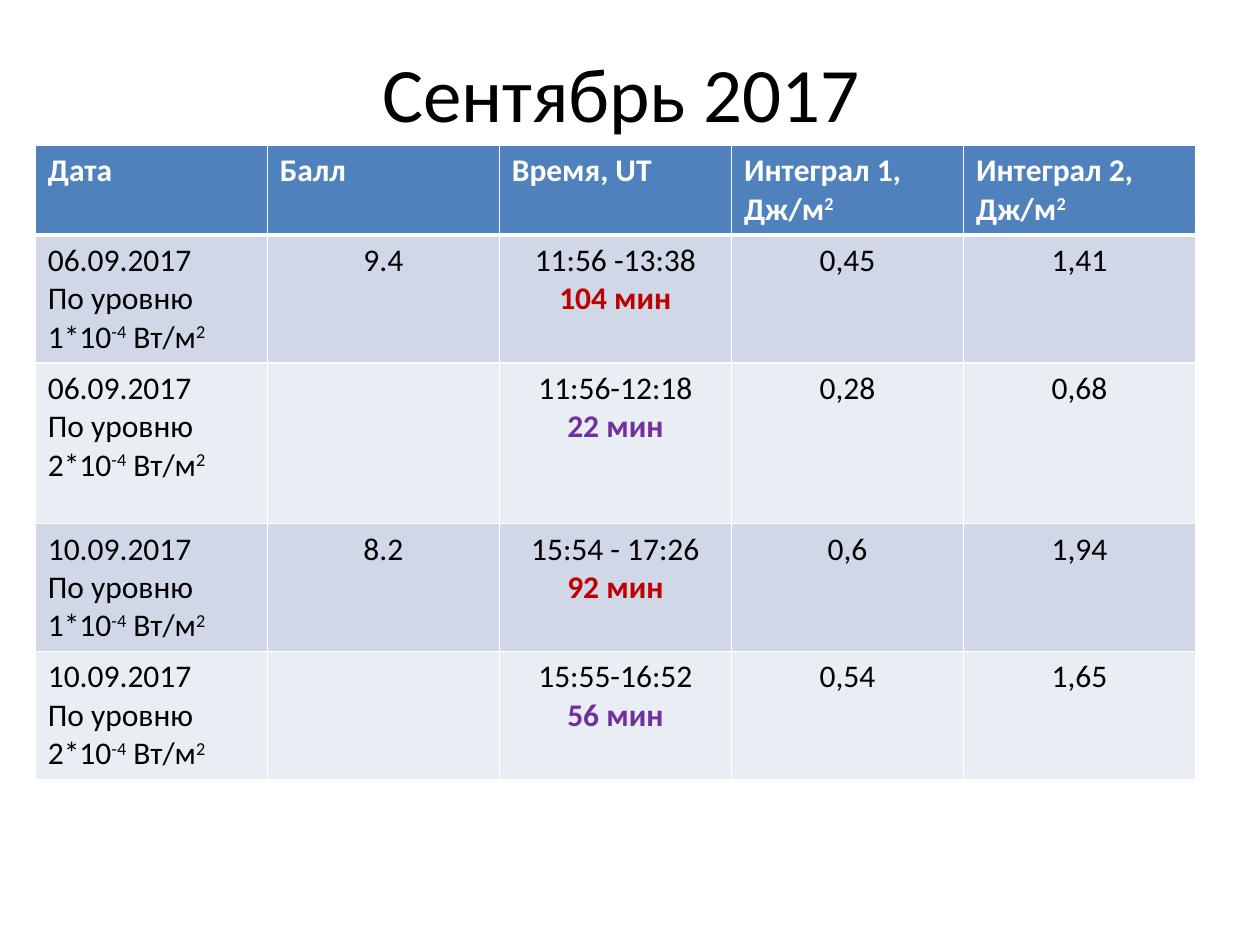
from dataclasses import dataclass

from lxml.etree import SubElement
from pptx import Presentation
from pptx.dml.color import RGBColor
from pptx.enum.text import MSO_ANCHOR, PP_ALIGN
from pptx.oxml.ns import qn
from pptx.util import Inches, Pt


@dataclass(frozen=True)
class Theme:
    font: str = "Calibri"
    title_size: int = 44
    table_size: int = 18
    ink: str = "000000"
    white: str = "FFFFFF"
    header: str = "4F81BD"
    bands: tuple = ("D0D8E8", "E9EDF4")
    level_colors: tuple = ("C00000", "7030A0")
    rule: int = 1
    header_rule: int = 3


@dataclass(frozen=True)
class Piece:
    text: str
    color: str = Theme.ink
    bold: bool = False
    raised: bool = False


class SlideBuilder:
    def __init__(self, deck, theme):
        self.deck = deck
        self.theme = theme
        self.page = deck.slides.add_slide(deck.slide_layouts[5])

    def place(self, left, top, width, height):
        """Turn shares of the slide's size into lengths."""
        across, down = self.deck.slide_width, self.deck.slide_height
        return (round(left * across), round(top * down),
                round(width * across), round(height * down))

    def add_text(self, para, pieces, size, align):
        para.alignment = align
        for piece in pieces:
            span = para.add_run()
            span.text = piece.text
            font = span.font
            font.name, font.size, font.bold = self.theme.font, Pt(size), piece.bold
            font.color.rgb = RGBColor.from_string(piece.color)
            if piece.raised:
                span._r.get_or_add_rPr().set("baseline", "30000")

    def title(self, text, area):
        box = self.page.shapes.title
        box.left, box.top, box.width, box.height = self.place(*area)
        box.text_frame.vertical_anchor = MSO_ANCHOR.MIDDLE
        self.add_text(box.text_frame.paragraphs[0], [Piece(text)],
                      self.theme.title_size, PP_ALIGN.CENTER)

    def borders(self, cell, bottom):
        """Draw the cell's four edges; they must come before its fill."""
        properties = cell._tc.get_or_add_tcPr()
        edges = {"a:lnL": self.theme.rule, "a:lnR": self.theme.rule,
                 "a:lnT": self.theme.rule, "a:lnB": bottom}
        for position, (tag, points) in enumerate(edges.items()):
            line = SubElement(properties, qn(tag), w=str(Pt(points)))
            fill = SubElement(line, qn("a:solidFill"))
            SubElement(fill, qn("a:srgbClr"), val=self.theme.white)
            properties.insert(position, line)

    def cell(self, cell, paragraphs, fill, align, bottom):
        cell.fill.solid()
        cell.fill.fore_color.rgb = RGBColor.from_string(fill)
        self.borders(cell, bottom)
        frame = cell.text_frame
        frame.paragraphs[0].font.size = Pt(self.theme.table_size)
        for index, pieces in enumerate(paragraphs):
            para = frame.add_paragraph() if index else frame.paragraphs[0]
            self.add_text(para, pieces, self.theme.table_size, align)

    def table(self, header, body, area, row_shares):
        theme = self.theme
        rows = [header, *body]
        table = self.page.shapes.add_table(
            len(rows), len(header), *self.place(*area)).table
        for row, share in zip(table.rows, row_shares):
            row.height = round(share * self.deck.slide_height)
        for r, row in enumerate(rows):
            fill = theme.bands[(r - 1) % 2] if r else theme.header
            bottom = theme.rule if r else theme.header_rule
            for c, paragraphs in enumerate(row):
                align = PP_ALIGN.CENTER if r and c else PP_ALIGN.LEFT
                self.cell(table.cell(r, c), paragraphs, fill, align, bottom)


def heading(text, squared=False):
    pieces = [Piece(text, Theme.white, True)]
    if squared:
        pieces.append(Piece("2", Theme.white, True, raised=True))
    return pieces


def flare_row(date, level, score, period, minutes, *integrals):
    threshold = [Piece(f"По уровню {level}*10"), Piece("-4", raised=True),
                 Piece(" Вт/м"), Piece("2", raised=True)]
    duration = Piece(f"{minutes} мин", Theme.level_colors[level - 1], True)
    return [
        [[Piece(date)], threshold],
        [[Piece(score)]] if score else [],
        [[Piece(period)], [duration]],
        *([[Piece(value)]] for value in integrals),
    ]


HEADER = [
    [heading("Дата")],
    [heading("Балл")],
    [heading("Время, UT")],
    [heading("Интеграл 1, Дж/м", squared=True)],
    [heading("Интеграл 2,"), heading("Дж/м", squared=True)],
]
FLARES = [
    flare_row("06.09.2017", 1, "9.4", "11:56 -13:38", 104, "0,45", "1,41"),
    flare_row("06.09.2017", 2, "", "11:56-12:18", 22, "0,28", "0,68"),
    flare_row("10.09.2017", 1, "8.2", "15:54 - 17:26", 92, "0,6", "1,94"),
    flare_row("10.09.2017", 2, "", "15:55-16:52", 56, "0,54", "1,65"),
]


def main():
    deck = Presentation()
    deck.slide_width, deck.slide_height = Inches(10), Inches(7.5)
    slide = SlideBuilder(deck, Theme())
    line, padding = 0.04, 0.01
    row_shares = [lines * line + padding for lines in (2, 3, 4, 3, 3)]
    slide.table(HEADER, FLARES, (0.028, 0.154, 0.921, sum(row_shares)), row_shares)
    slide.title("Сентябрь 2017", (0.043, 0.039, 0.9, 0.116))
    deck.save("out.pptx")


if __name__ == "__main__":
    main()
